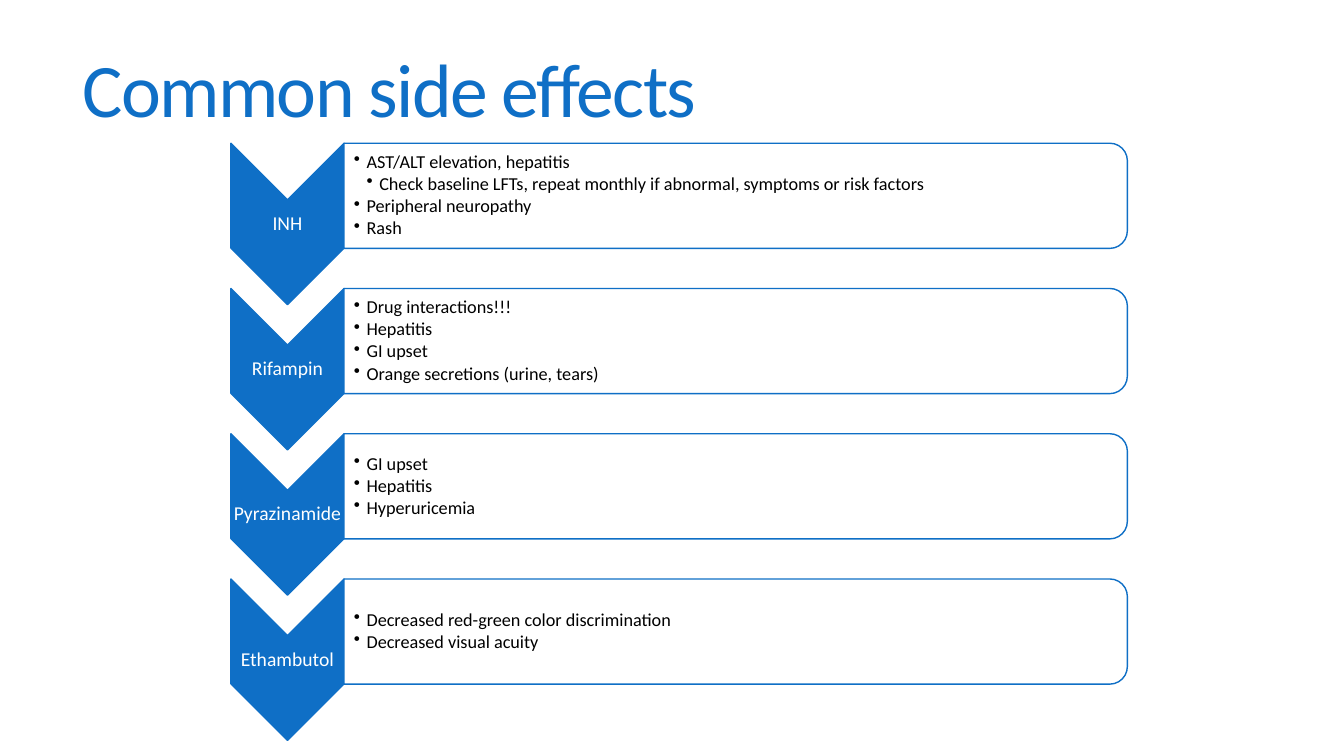
from lxml import etree
from pptx import Presentation
from pptx.dml.color import RGBColor
from pptx.enum.shapes import MSO_SHAPE
from pptx.enum.text import MSO_ANCHOR, PP_ALIGN
from pptx.oxml.ns import qn
from pptx.util import Cm, Pt

CHEVRON = MSO_SHAPE.CHEVRON
PANEL = MSO_SHAPE.ROUND_2_SAME_RECTANGLE
MIDDLE = MSO_ANCHOR.MIDDLE
LEFT, CENTER = PP_ALIGN.LEFT, PP_ALIGN.CENTER

COLORS = {"blue": "0F6FC6", "white": "FFFFFF", "black": "000000"}

DRUGS = [
    ("INH", [
        (0, "AST/ALT elevation, hepatitis"),
        (1, "Check baseline LFTs, repeat monthly if abnormal, symptoms or risk factors"),
        (0, "Peripheral neuropathy"),
        (0, "Rash"),
    ]),
    ("Rifampin", [
        (0, "Drug interactions!!!"),
        (0, "Hepatitis"),
        (0, "GI upset"),
        (0, "Orange secretions (urine, tears)"),
    ]),
    ("Pyrazinamide", [
        (0, "GI upset"),
        (0, "Hepatitis"),
        (0, "Hyperuricemia"),
    ]),
    ("Ethambutol", [
        (0, "Decreased red-green color discrimination"),
        (0, "Decreased visual acuity"),
    ]),
]

FIRST_TOP, ROW_PITCH = 3.61, 3.66
CHEVRON_LEFT, CHEVRON_WIDTH, CHEVRON_HEIGHT = 5.82, 2.85, 4.07
PANEL_LEFT, PANEL_WIDTH, PANEL_HEIGHT = 8.67, 19.74, 2.65
LABEL_HEIGHT, LIST_WIDTH, LIST_HEIGHT = 1.22, 19.61, 2.4
INDENT = 0.32


class SideEffectsSlide:
    font_name = "Calibri"

    def __init__(self, presentation):
        self.slide = presentation.slides.add_slide(presentation.slide_layouts[6])

    def color(self, name):
        return RGBColor.from_string(COLORS[name])

    def turned_shape(self, kind, left, top, width, height, fill):
        shift = (width - height) / 2
        shape = self.slide.shapes.add_shape(
            kind, Cm(left + shift), Cm(top - shift), Cm(height), Cm(width))
        shape.rotation = 90
        shape.shadow.inherit = False
        shape.fill.solid()
        shape.fill.fore_color.rgb = self.color(fill)
        shape.line.color.rgb = self.color("blue")
        shape.line.width = Pt(1)
        return shape

    def text(self, content, left, top, width, height, size, color,
             alignment=LEFT, spacing=0.9, side=0.03, edge=0.03):
        shape = self.slide.shapes.add_textbox(Cm(left), Cm(top), Cm(width), Cm(height))
        frame = shape.text_frame
        frame.word_wrap = True
        frame.vertical_anchor = MIDDLE
        frame.margin_left = Cm(side)
        frame.margin_right = Cm(edge)
        frame.margin_top = frame.margin_bottom = Cm(edge)
        frame.text = content
        for paragraph in frame.paragraphs:
            paragraph.alignment = alignment
            paragraph.line_spacing = spacing
            for run in paragraph.runs:
                run.font.name = self.font_name
                run.font.size = Pt(size)
                run.font.color.rgb = self.color(color)
        return frame

    def title(self, content):
        frame = self.text(content, 1.83, 0.08, 29.92, 4.6, 54, "blue",
                          spacing=0.85, side=0.25, edge=0.13)
        for run in frame.paragraphs[0].runs:
            run.font._element.set("spc", "-120")

    def bullet_list(self, items, left, top, width, height):
        content = "\n".join(item for _, item in items)
        frame = self.text(content, left, top, width, height, 13, "black", side=0.25)
        for paragraph, (level, _) in zip(frame.paragraphs, items):
            paragraph.level = level
            paragraph.space_after = Pt(1.7)
            properties = paragraph._p.get_or_add_pPr()
            properties.set("marL", str(Cm(INDENT * (level + 1))))
            properties.set("indent", str(-Cm(INDENT)))
            etree.SubElement(properties, qn("a:buChar")).set("char", "•")

    def drug_row(self, top, drug, effects):
        self.turned_shape(CHEVRON, CHEVRON_LEFT, top, CHEVRON_WIDTH, CHEVRON_HEIGHT, "blue")
        self.text(drug, CHEVRON_LEFT, top + (CHEVRON_HEIGHT - LABEL_HEIGHT) / 2,
                  CHEVRON_WIDTH, LABEL_HEIGHT, 14, "white", CENTER)
        self.turned_shape(PANEL, PANEL_LEFT, top, PANEL_WIDTH, PANEL_HEIGHT, "white")
        self.bullet_list(effects, PANEL_LEFT, top + (PANEL_HEIGHT - LIST_HEIGHT) / 2,
                         LIST_WIDTH, LIST_HEIGHT)


def main():
    presentation = Presentation()
    presentation.slide_width = Cm(33.87)
    presentation.slide_height = Cm(19.05)
    page = SideEffectsSlide(presentation)
    page.title("Common side effects")
    for row, (drug, effects) in enumerate(DRUGS):
        page.drug_row(FIRST_TOP + row * ROW_PITCH, drug, effects)
    presentation.save("out.pptx")


if __name__ == "__main__":
    main()
